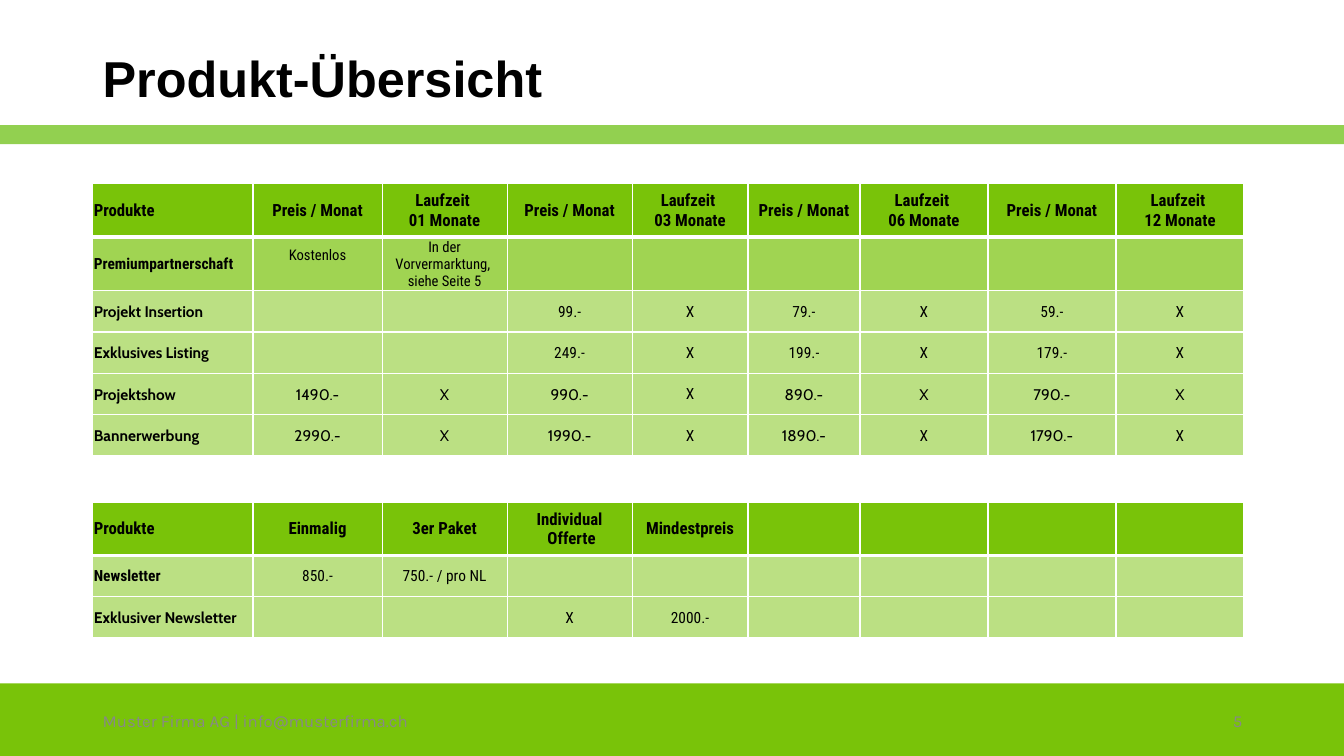
from copy import deepcopy

from lxml.etree import SubElement
from pptx import Presentation
from pptx.dml.color import RGBColor
from pptx.enum.shapes import MSO_SHAPE
from pptx.enum.text import MSO_ANCHOR, PP_ALIGN
from pptx.oxml.ns import qn
from pptx.util import Inches, Pt

COLORS = {
    "green": "79C309",
    "light_green": "92D050",
    "white": "FFFFFF",
    "black": "000000",
    "gray": "888888",
}
FONTS = {"R": "Roboto Condensed", "C": "Cabin"}
COLUMN_WIDTHS = [1.59, 1.28, 1.24, 1.24, 1.15, 1.11, 1.27, 1.27, 1.27]
LEFT = 0.92
HEADER_HEIGHT = 0.53
ROW_HEIGHT = 0.41
TALL_ROW_HEIGHT = 0.51

PRICE_HEADER = ["Produkte"] + [
    text
    for months in ("01", "03", "06", "12")
    for text in ("Preis / Monat", f"Laufzeit \v{months} Monate")
]
PRICE_ROWS = [
    ("RRRRRRRRR", ["Premiumpartnerschaft", "Kostenlos",
                   "In der Vorvermarktung, \vsiehe Seite 5"]),
    ("CRRRRRRRR", ["Projekt Insertion", "", "", "99.-", "X", "79.-", "X", "59.-", "X"]),
    ("CRRRRRRRR", ["Exklusives Listing", "", "", "249.-", "X", "199.-", "X", "179.-", "X"]),
    ("CCCCRCCCC", ["Projektshow", "1490.-", "X", "990.-", "X", "890.-", "X", "790.-", "X"]),
    ("CCCCRCRCR", ["Bannerwerbung", "2990.-", "X", "1990.-", "X", "1890.-", "X", "1790.-", "X"]),
]
NEWSLETTER_HEADER = ["Produkte", "Einmalig", "3er Paket", "Individual\n Offerte", "Mindestpreis"]
NEWSLETTER_ROWS = [
    ("RRRRRRRRR", ["Newsletter", "850.-", "750.- / pro NL"]),
    ("CRRRRRRRR", ["Exklusiver Newsletter", "", "", "X", "2000.-"]),
]


def write_text(frame, text, font, size, color="black", bold=False, align=PP_ALIGN.LEFT):
    frame.text = text
    for para in frame.paragraphs:
        para.alignment = align
        for span in para.runs:
            span.font.name = font
            span.font.size = Pt(size)
            span.font.bold = bold
            span.font.color.rgb = RGBColor.from_string(COLORS[color])
        for line_break in para._p.findall(qn("a:br")):
            line_break.append(deepcopy(para.runs[0]._r.rPr))


def add_text_box(page, box, text, **text_format):
    frame = page.shapes.add_textbox(*map(Inches, box)).text_frame
    frame.word_wrap = True
    frame.vertical_anchor = MSO_ANCHOR.MIDDLE
    write_text(frame, text, **text_format)


def add_band(page, box, color):
    band = page.shapes.add_shape(MSO_SHAPE.RECTANGLE, *map(Inches, box))
    band.shadow.inherit = False
    band.fill.solid()
    band.fill.fore_color.rgb = RGBColor.from_string(COLORS[color])
    band.line.fill.background()


def style_cell(cell, alpha, top, bottom):
    cell.vertical_anchor = MSO_ANCHOR.MIDDLE
    cell.margin_left = cell.margin_right = cell.margin_top = Inches(0.01)
    cell.margin_bottom = 0
    properties = cell._tc.get_or_add_tcPr()
    for side, width in (("L", 1), ("R", 1), ("T", top), ("B", bottom)):
        border = SubElement(properties, qn(f"a:ln{side}"), w=str(Pt(width)))
        fill = SubElement(border, qn("a:solidFill"))
        SubElement(fill, qn("a:srgbClr"), val=COLORS["white"])
    cell.fill.solid()
    cell.fill.fore_color.rgb = RGBColor.from_string(COLORS["green"])
    if alpha < 100:
        color = properties.find(qn("a:solidFill")).find(qn("a:srgbClr"))
        SubElement(color, qn("a:alpha"), val=str(alpha * 1000))


def add_product_table(page, left, top, header, rows, row_heights):
    heights = [HEADER_HEIGHT] + row_heights
    lines = [("R" * len(COLUMN_WIDTHS), header)] + rows
    box = (left, top, sum(COLUMN_WIDTHS), sum(heights))
    table = page.shapes.add_table(
        len(lines), len(COLUMN_WIDTHS), *map(Inches, box)
    ).table
    table.first_row = table.horz_banding = False
    for column, width in zip(table.columns, COLUMN_WIDTHS):
        column.width = Inches(width)
    for row_index, (fonts, texts) in enumerate(lines):
        table.rows[row_index].height = Inches(heights[row_index])
        is_header = row_index == 0
        is_premium = texts[0] == "Premiumpartnerschaft"
        alpha = 100 if is_header else 70 if is_premium else 50
        for column_index in range(len(COLUMN_WIDTHS)):
            cell = table.cell(row_index, column_index)
            style_cell(cell, alpha, 3 if row_index == 1 else 1, 3 if is_header else 1)
            text = texts[column_index] if column_index < len(texts) else ""
            if not text:
                continue
            is_label = column_index == 0
            size = 12 if is_header else 10.5 if is_premium and not is_label else 11
            write_text(
                cell.text_frame, text, font=FONTS[fonts[column_index]], size=size,
                bold=is_header or is_label,
                align=PP_ALIGN.LEFT if is_label else PP_ALIGN.CENTER,
            )
    return table


def add_title(page, box):
    left, top, width, height = box
    add_band(page, (0, top + 0.84, 13.33, 0.19), "light_green")
    add_text_box(page, box, "Produkt-Übersicht", font="Arial", size=36, bold=True)


def add_footer(page, box):
    left, top, width, height = box
    add_band(page, box, "green")
    note = {"font": "Karla", "size": 12, "color": "gray"}
    add_text_box(page, (left + LEFT, top + 0.16, 10.63, 0.43),
                 "Muster Firma AG | info@musterfirma.ch", **note)
    add_text_box(page, (left + 11.7, top + 0.16, 0.72, 0.43), "5",
                 align=PP_ALIGN.RIGHT, **note)


def main():
    deck = Presentation()
    deck.slide_width, deck.slide_height = Inches(13.33), Inches(7.5)
    page = deck.slides.add_slide(deck.slide_layouts[6])
    add_footer(page, (0, 6.78, 13.33, 0.72))
    add_title(page, (LEFT, 0.4, 8.56, 0.74))
    prices = add_product_table(page, LEFT, 1.82, PRICE_HEADER, PRICE_ROWS,
                               [TALL_ROW_HEIGHT] + [ROW_HEIGHT] * 4)
    prices.cell(1, 1).margin_bottom = Inches(0.17)
    add_product_table(page, LEFT, 4.98, NEWSLETTER_HEADER, NEWSLETTER_ROWS,
                      [ROW_HEIGHT] * 2)
    deck.save("out.pptx")


if __name__ == "__main__":
    main()
